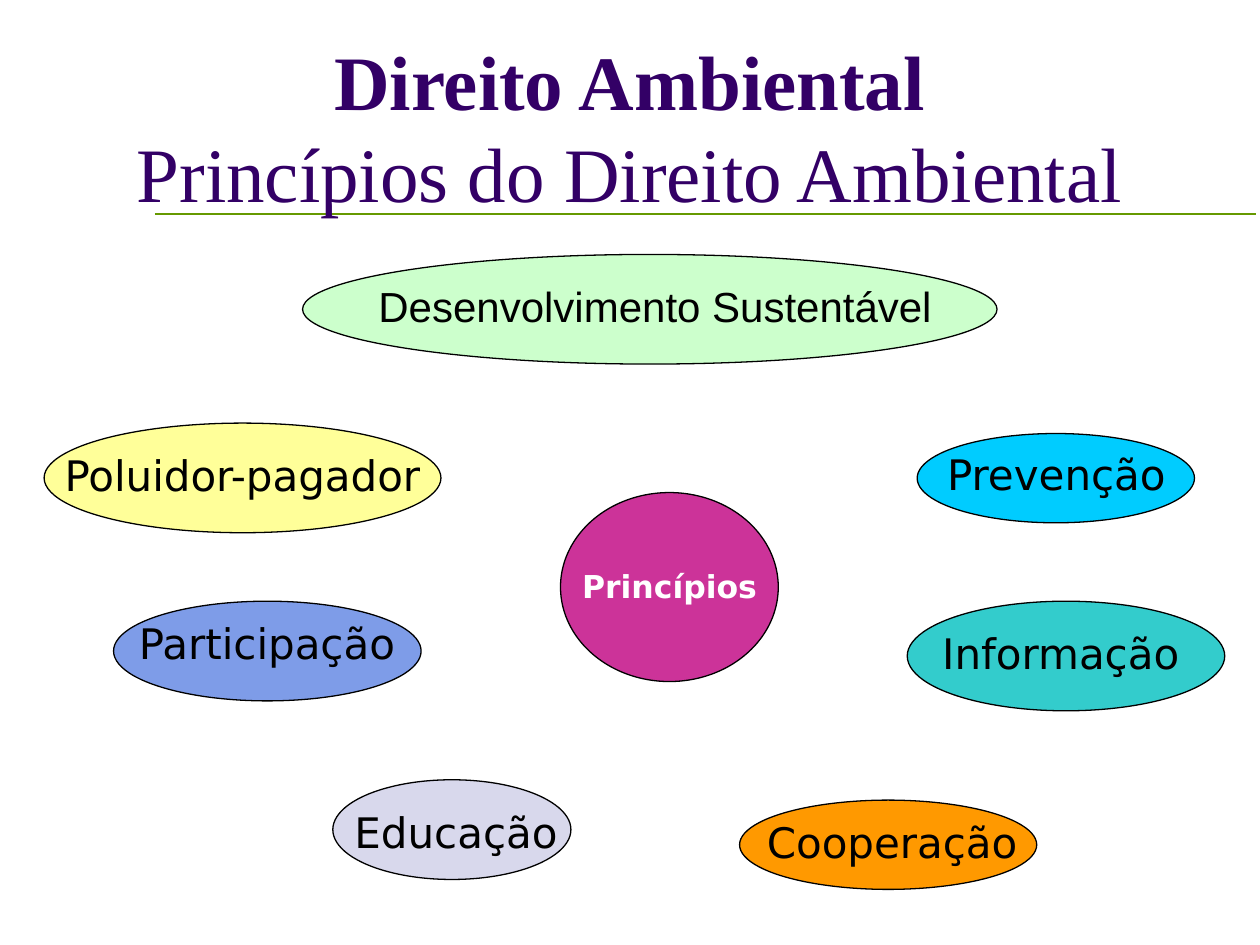
from lxml import etree
from pptx import Presentation
from pptx.dml.color import RGBColor
from pptx.enum.shapes import MSO_CONNECTOR, MSO_SHAPE
from pptx.enum.text import MSO_ANCHOR, MSO_AUTO_SIZE, PP_ALIGN
from pptx.oxml.ns import qn
from pptx.util import Cm, Pt

STRAIGHT = MSO_CONNECTOR.STRAIGHT
OVAL = MSO_SHAPE.OVAL
CENTER = PP_ALIGN.CENTER
TOP, BOTTOM = MSO_ANCHOR.TOP, MSO_ANCHOR.BOTTOM
NO_FIT = MSO_AUTO_SIZE.NONE
TITLE_ONLY = 5

COLORS = {
    "title": "330066",
    "rule": "669900",
    "black": "000000",
    "white": "FFFFFF",
    "teal": "33CCCC",
    "cyan": "00CCFF",
    "orange": "FF9900",
    "lavender": "D8D8EC",
    "blue": "7E9CE8",
    "yellow": "FFFF99",
    "green": "CCFFCC",
    "magenta": "CC3399",
}

LABEL_HEIGHT = 1.6
PRINCIPLES = [
    ("Informação", "teal", (18.29, 12.12, 6.4, 2.21), (18.49, 12.52, 5.79)),
    ("Prevenção", "cyan", (18.49, 8.74, 5.59, 1.8), (18.69, 8.92, 5.21)),
    ("Cooperação", "orange", (14.91, 16.13, 5.99, 1.8), (15.09, 16.33, 5.79)),
    ("Educação", "lavender", (6.71, 15.72, 4.8, 2.01), (6.3, 16.13, 5.79)),
    ("Participação", "blue", (2.29, 12.12, 6.2, 2.01), (2.49, 12.32, 5.79)),
    ("Poluidor-pagador", "yellow", (0.89, 8.53, 8, 2.21), (0.89, 8.94, 8)),
]


class SlideBuilder:
    title_font = "Times New Roman"
    label_font = "DejaVu Sans"

    def __init__(self, slide):
        self.slide = slide

    def color(self, name):
        return RGBColor.from_string(COLORS[name])

    def format_font(self, paragraph, name, size, color, bold=None):
        paragraph.alignment = CENTER
        font = paragraph.font
        font.name, font.size, font.bold = name, Pt(size), bold
        font.color.rgb = self.color(color)

    def title(self, heading, subtitle, box):
        title = self.slide.shapes.title
        title.left, title.top, title.width, title.height = map(Cm, box)
        frame = title.text_frame
        frame.auto_size = NO_FIT
        frame.word_wrap = True
        frame.vertical_anchor = BOTTOM
        paragraph = frame.paragraphs[0]
        self.format_font(paragraph, self.title_font, 44, "title")
        heading_run = paragraph.add_run()
        heading_run.text = heading
        heading_run.font.bold = True
        paragraph.add_line_break()
        paragraph.add_run().text = subtitle

    def rule(self, left, right, y):
        shapes = self.slide.shapes
        rule = shapes.add_connector(STRAIGHT, Cm(left), Cm(y), Cm(right), Cm(y))
        rule.line.color.rgb = self.color("rule")
        rule.line.width = Pt(1)
        etree.SubElement(rule._element.spPr, qn("a:effectLst"))
        shapes._spTree.insert(2, rule._element)

    def ellipse(self, box, fill):
        ellipse = self.slide.shapes.add_shape(OVAL, *map(Cm, box))
        ellipse.shadow.inherit = False
        ellipse.fill.solid()
        ellipse.fill.fore_color.rgb = self.color(fill)
        ellipse.line.color.rgb = self.color("black")
        ellipse.line.width = Pt(0.75)

    def label(self, text, box, font=label_font, size=24, color="black",
              bold=None, wrap=True):
        frame = self.slide.shapes.add_textbox(*map(Cm, box)).text_frame
        frame.word_wrap = wrap
        frame.vertical_anchor = TOP
        paragraph = frame.paragraphs[0]
        paragraph.text = text
        self.format_font(paragraph, font, size, color, bold)


def main():
    presentation = Presentation()
    presentation.slide_width, presentation.slide_height = Cm(25.4), Cm(19.05)
    layout = presentation.slide_layouts[TITLE_ONLY]
    builder = SlideBuilder(presentation.slides.add_slide(layout))

    builder.rule(3.12, 25.32, 4.32)
    builder.title("Direito Ambiental", "Princípios do Direito Ambiental",
                  (1.27, 1.35, 22.86, 3.18))

    builder.ellipse((6.1, 5.13, 14, 2.21), "green")
    builder.label("Desenvolvimento Sustentável",
                  (6.5, 5.54, 13.41, LABEL_HEIGHT), font="Arial")
    for principle, fill, oval_box, label_box in PRINCIPLES:
        builder.ellipse(oval_box, fill)
        builder.label(principle, (*label_box, LABEL_HEIGHT))

    builder.ellipse((11.3, 9.93, 4.39, 3.81), "magenta")
    builder.label("Princípios", (11.48, 11.3, 4.04, 1.02), size=18,
                  color="white", bold=True, wrap=False)

    presentation.save("out.pptx")


if __name__ == "__main__":
    main()
